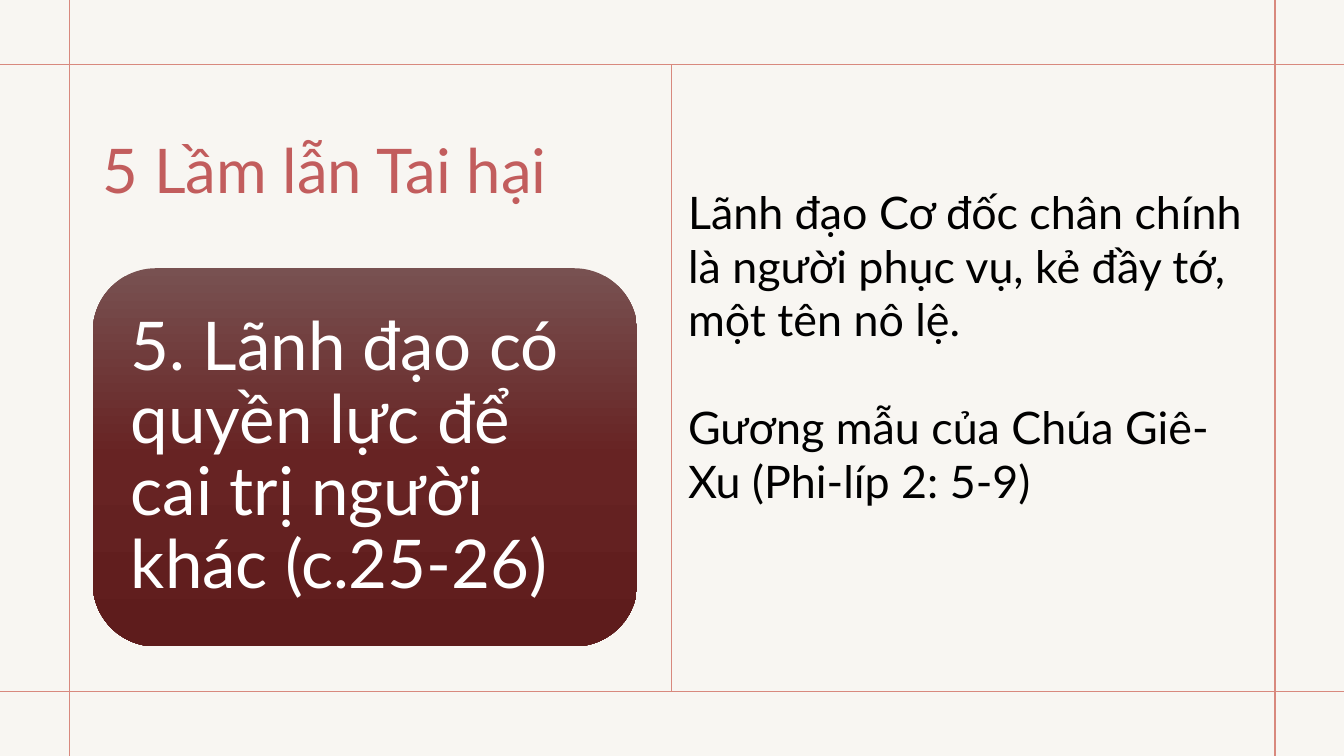
"""Build the slide on the fifth disastrous leadership mistake."""
import copy
from dataclasses import dataclass

import pptx
import pptx.dml.color
import pptx.enum.shapes
import pptx.enum.text
import pptx.oxml
import pptx.oxml.ns
import pptx.slide
import pptx.util

Cm = pptx.util.Cm
Pt = pptx.util.Pt
RGBColor = pptx.dml.color.RGBColor
Anchor = pptx.enum.text.MSO_ANCHOR

PAPER = RGBColor(0xF8, 0xF6, 0xF2)
RULE = RGBColor(0xD8, 0x89, 0x7E)
ROSE = RGBColor(0xC2, 0x5D, 0x5D)
WHITE = RGBColor(0xFF, 0xFF, 0xFF)
BLACK = RGBColor(0x00, 0x00, 0x00)
CARD_STOPS = (
    (0.0, RGBColor(0x78, 0x51, 0x51)),
    (0.5, RGBColor(0x67, 0x23, 0x23)),
    (1.0, RGBColor(0x5E, 0x1C, 0x1C)),
)
FONT = "Lato"
WIDTH, HEIGHT = 33.87, 19.05
TOP_RULE, BOTTOM_RULE = 1.63, 17.42


@dataclass(frozen=True)
class Box:
    """Position and size in centimetres."""

    left: float
    top: float
    width: float
    height: float

    def lengths(self) -> tuple[Cm, Cm, Cm, Cm]:
        """Give the box as slide lengths."""
        return Cm(self.left), Cm(self.top), Cm(self.width), Cm(self.height)


@dataclass(frozen=True)
class GridRule:
    """Ends of one grid line in centimetres."""

    x1: float
    y1: float
    x2: float
    y2: float


GRID = (
    GridRule(0, BOTTOM_RULE, WIDTH, BOTTOM_RULE),
    GridRule(0, TOP_RULE, WIDTH, TOP_RULE),
    GridRule(32.13, 0, 32.13, HEIGHT),
    GridRule(1.75, 0, 1.75, HEIGHT),
    GridRule(16.93, TOP_RULE, 16.93, BOTTOM_RULE),
)


def add_rule(slide: pptx.slide.Slide, rule: GridRule) -> None:
    """Draw one thin grid line."""
    line = slide.shapes.add_connector(
        pptx.enum.shapes.MSO_CONNECTOR.STRAIGHT,
        Cm(rule.x1), Cm(rule.y1), Cm(rule.x2), Cm(rule.y2),
    )
    line.line.color.rgb = RULE
    line.line.width = Pt(1)
    properties = line._element.find(pptx.oxml.ns.qn("p:spPr"))
    properties.append(pptx.oxml.parse_xml(
        f"<a:effectLst {pptx.oxml.ns.nsdecls('a')}/>"
    ))


def add_card(slide: pptx.slide.Slide, box: Box) -> None:
    """Draw the rounded card with its downward gradient."""
    card = slide.shapes.add_shape(
        pptx.enum.shapes.MSO_SHAPE.ROUNDED_RECTANGLE, *box.lengths()
    )
    card.shadow.inherit = False
    card.line.fill.background()
    card.fill.gradient()
    card.fill.gradient_angle = 270
    first_stop = next(card._element.iter(pptx.oxml.ns.qn("a:gs")))
    first_stop.addnext(copy.deepcopy(first_stop))
    for stop, (position, color) in zip(card.fill.gradient_stops, CARD_STOPS):
        stop.position = position
        stop.color.rgb = color


def add_text(
    slide: pptx.slide.Slide,
    box: Box,
    *paragraphs: str,
    size: float,
    color: RGBColor,
    anchor: Anchor = Anchor.MIDDLE,
    inset_x: float = 0.25,
    inset_y: float = 0.13,
    line_spacing: float = 1.0,
    gap: float = 0,
) -> None:
    """Add a wrapped text box with one format for all its paragraphs."""
    frame = slide.shapes.add_textbox(*box.lengths()).text_frame
    frame.word_wrap = True
    frame.vertical_anchor = anchor
    frame.margin_left = frame.margin_right = Cm(inset_x)
    frame.margin_top = frame.margin_bottom = Cm(inset_y)
    for index, text in enumerate(paragraphs):
        paragraph = frame.add_paragraph() if index else frame.paragraphs[0]
        paragraph.line_spacing = line_spacing
        paragraph.space_before = Pt(gap if index else 0)
        run = paragraph.add_run()
        run.text = text
        run.font.name = FONT
        run.font.size = Pt(size)
        run.font.color.rgb = color


def main() -> None:
    """Assemble and save the slide."""
    presentation = pptx.Presentation()
    presentation.slide_width = Cm(WIDTH)
    presentation.slide_height = Cm(HEIGHT)
    slide = presentation.slides.add_slide(presentation.slide_layouts[6])
    slide.background.fill.solid()
    slide.background.fill.fore_color.rgb = PAPER

    for rule in GRID:
        add_rule(slide, rule)
    add_text(
        slide, Box(2.34, 2.03, 13.72, 4.45), "5 Lầm lẫn Tai hại",
        size=44, color=ROSE,
    )
    add_card(slide, Box(2.34, 6.76, 13.72, 9.53))
    add_text(
        slide, Box(2.79, 7.24, 12.78, 8.59),
        "5. Lãnh đạo có quyền lực để cai trị người khác (c.25-26)",
        size=48, color=WHITE, inset_x=0.51, inset_y=0.51, line_spacing=0.9,
    )
    add_text(
        slide, Box(17.09, 3, 14.88, 10.77),
        "Lãnh đạo Cơ đốc chân chính là người phục vụ, kẻ đầy tớ, một tên nô lệ.",
        "Gương mẫu của Chúa Giê-Xu (Phi-líp 2: 5-9)",
        size=32, color=BLACK, anchor=Anchor.TOP, inset_y=1.65, gap=38.4,
    )
    presentation.save("out.pptx")


if __name__ == "__main__":
    main()
